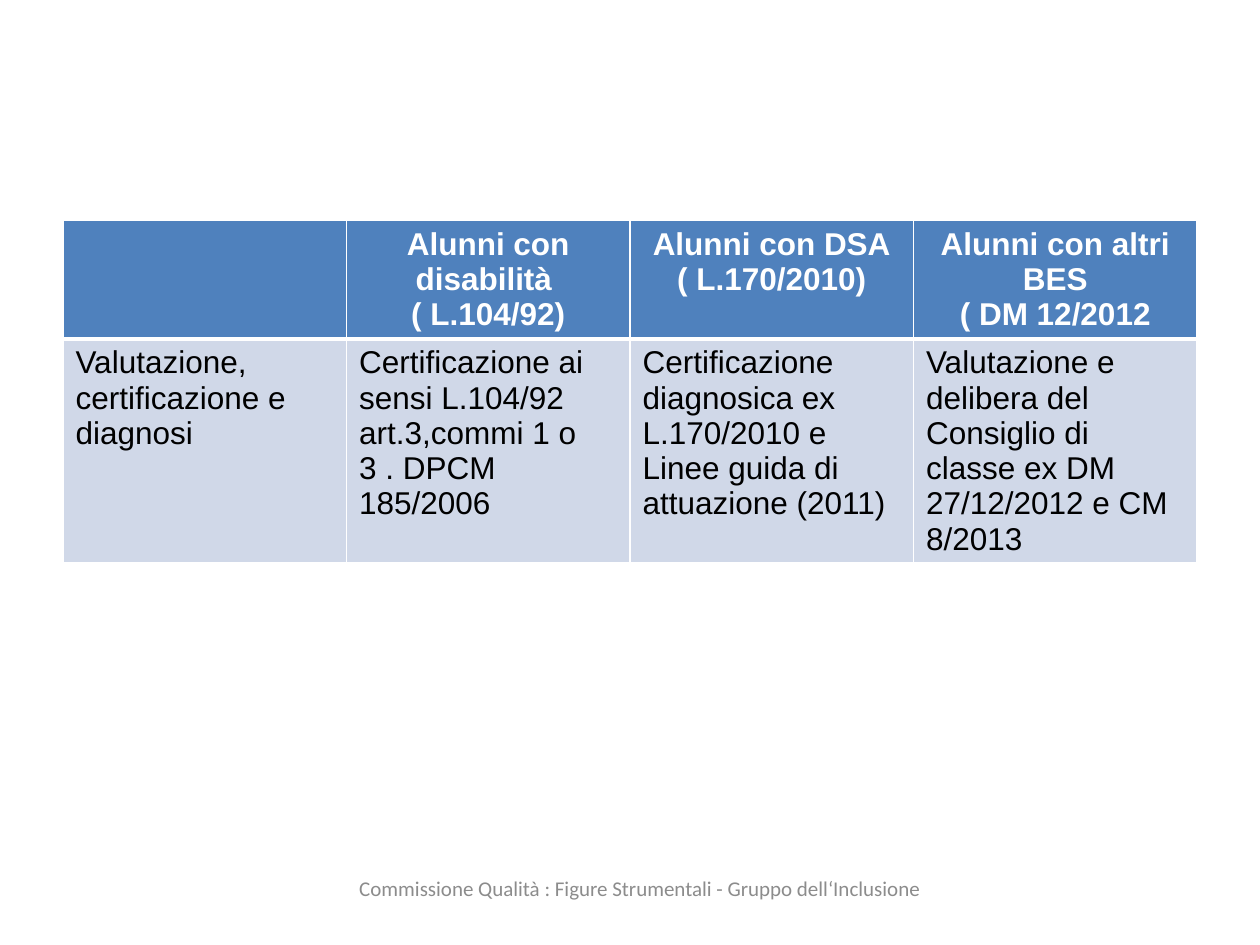
from dataclasses import dataclass

import pptx
import pptx.dml.color
import pptx.enum.text
import pptx.oxml
import pptx.oxml.ns
import pptx.util

Pt = pptx.util.Pt
ALIGN = pptx.enum.text.PP_ALIGN
WHITE = "FFFFFF"


@dataclass(frozen=True)
class TextStyle:
    font: str
    size: float
    color: str
    bold: bool
    align: ALIGN


@dataclass(frozen=True)
class TableRow:
    height: float
    fill: str
    style: TextStyle
    top_line: float
    bottom_line: float
    texts: tuple[str, ...]


HEADER = TextStyle("Arial", 18, WHITE, True, ALIGN.CENTER)
BODY = TextStyle("Arial", 18, "000000", False, ALIGN.LEFT)
FOOTER = TextStyle("Calibri", 12, "8C8C8C", False, ALIGN.CENTER)

# Line breaks inside a text start a new paragraph
ROWS = (
    TableRow(67.5, "4F81BD", HEADER, 1, 3, (
        "",
        "Alunni con disabilità \n( L.104/92)",
        "Alunni con DSA\n( L.170/2010)",
        "Alunni con altri BES\n( DM 12/2012",
    )),
    TableRow(127.5, "D0D8E8", BODY, 3, 1, (
        "Valutazione,\ncertificazione e diagnosi",
        "Certificazione ai sensi L.104/92 art.3,commi 1 o 3 . DPCM 185/2006",
        "Certificazione diagnosica ex L.170/2010 e Linee guida di attuazione (2011)",
        "Valutazione e delibera del Consiglio di classe ex DM 27/12/2012 e CM 8/2013",
    )),
)


def rgb(value: str) -> pptx.dml.color.RGBColor:
    return pptx.dml.color.RGBColor.from_string(value)


def write_text(frame, text: str, style: TextStyle) -> None:
    frame.text = text
    for para in frame.paragraphs:
        para.alignment = style.align
        para.font.size = Pt(style.size)
        for span in para.runs:
            span.font.name = style.font
            span.font.size = Pt(style.size)
            span.font.bold = style.bold
            span.font.color.rgb = rgb(style.color)


def set_borders(cell, top: float, bottom: float) -> None:
    properties = cell._tc.get_or_add_tcPr()
    widths = {"lnL": 1, "lnR": 1, "lnT": top, "lnB": bottom}
    # Borders come before the fill in the cell properties
    for index, (side, width) in enumerate(widths.items()):
        line = pptx.oxml.parse_xml(
            f'<a:{side} {pptx.oxml.ns.nsdecls("a")} w="{Pt(width)}">'
            f'<a:solidFill><a:srgbClr val="{WHITE}"/></a:solidFill></a:{side}>'
        )
        properties.insert(index, line)


def add_comparison_table(page, rows: tuple[TableRow, ...]) -> None:
    width = 648
    column_count = len(rows[0].texts)
    height = sum(row.height for row in rows)
    table = page.shapes.add_table(
        len(rows), column_count, Pt(36), Pt(126), Pt(width), Pt(height)
    ).table
    for column in table.columns:
        column.width = Pt(width / column_count)
    for row_index, row in enumerate(rows):
        table.rows[row_index].height = Pt(row.height)
        for column_index, text in enumerate(row.texts):
            cell = table.cell(row_index, column_index)
            cell.fill.solid()
            cell.fill.fore_color.rgb = rgb(row.fill)
            set_borders(cell, row.top_line, row.bottom_line)
            write_text(cell.text_frame, text, row.style)


def add_footer(page, text: str) -> None:
    box = page.shapes.add_textbox(Pt(42.5), Pt(500.4), Pt(646.5), Pt(28.8))
    frame = box.text_frame
    frame.word_wrap = True
    frame.margin_top = Pt(0)
    frame.vertical_anchor = pptx.enum.text.MSO_ANCHOR.TOP
    write_text(frame, text, FOOTER)


def main() -> None:
    deck = pptx.Presentation()
    deck.slide_width, deck.slide_height = Pt(720), Pt(540)
    page = deck.slides.add_slide(deck.slide_layouts[6])

    # Comparison of the three groups of pupils
    add_comparison_table(page, ROWS)

    # Footer
    add_footer(page, "Commissione Qualità : Figure Strumentali - Gruppo dell‘Inclusione")

    deck.save("out.pptx")


if __name__ == "__main__":
    main()
